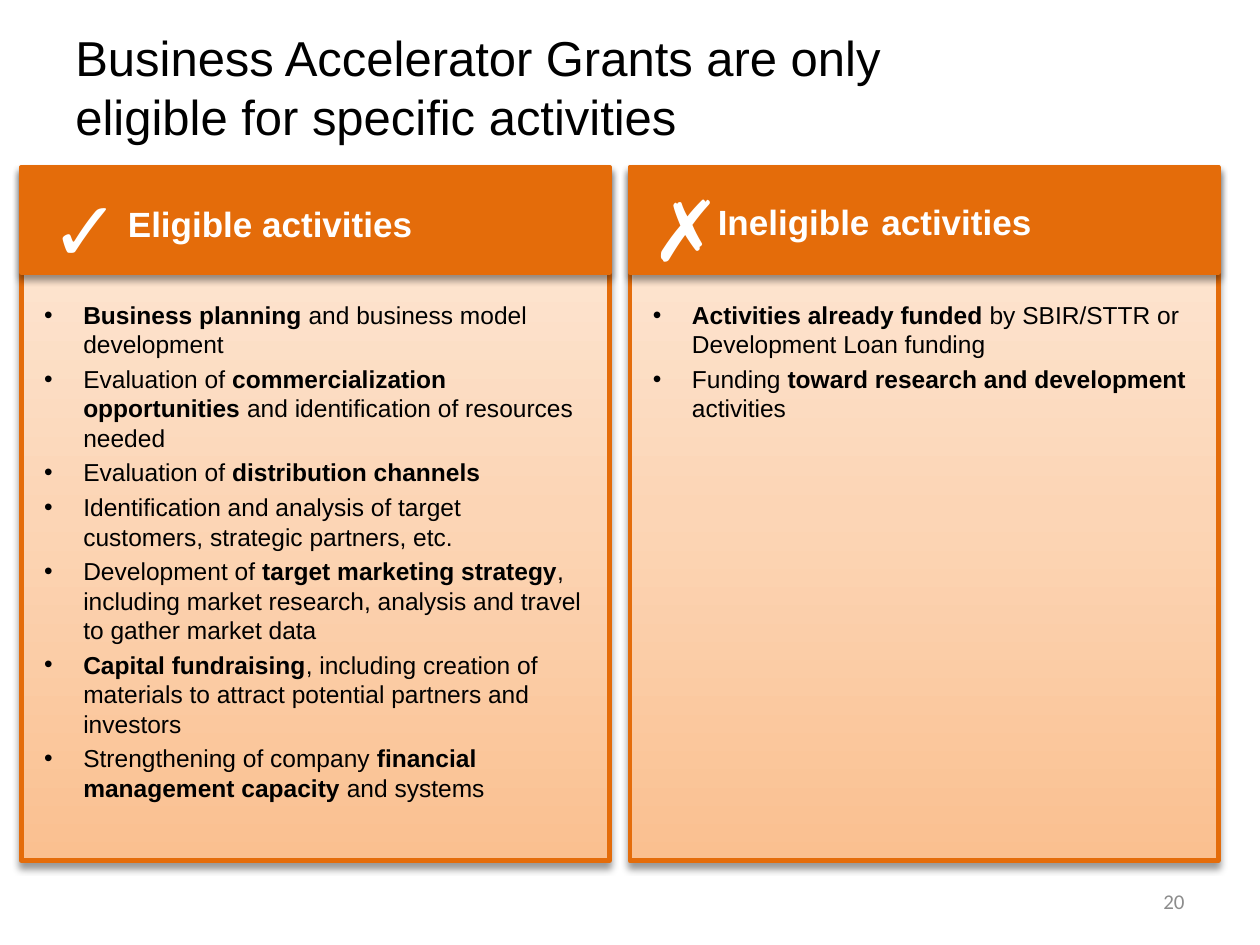
import lxml.etree
import pptx
import pptx.dml.color
import pptx.enum.shapes
import pptx.enum.text
import pptx.oxml.ns
import pptx.util

Cm = pptx.util.Cm
Pt = pptx.util.Pt
qn = pptx.oxml.ns.qn

ORANGE = "E46C0A"
WHITE = "FFFFFF"
BLACK = "000000"
PEACH_STOPS = ((0, "FAC090"), (50, "FCD5B5"), (100, "FDEADA"))

ELIGIBLE = (
    "**Business planning **and business model development",
    "Evaluation of **commercialization opportunities** and identification of resources needed",
    "Evaluation of **distribution channels**",
    "Identification and analysis of target customers, strategic partners, etc.",
    "Development of **target marketing strategy**, including market research, analysis and travel to gather market data",
    "**Capital fundraising**, including creation of materials to attract potential partners and investors",
    "Strengthening of company** financial management capacity** and systems",
)
INELIGIBLE = (
    "**Activities already funded **by SBIR/STTR or Development Loan funding",
    "Funding **toward research and development **activities",
)


def color(hex_code):
    """Turn a hex string into a colour."""
    return pptx.dml.color.RGBColor.from_string(hex_code)


def add_element(parent, tag, **attributes):
    """Append a DrawingML element with the given attributes."""
    element = lxml.etree.SubElement(parent, qn(tag))
    for key, value in attributes.items():
        element.set(key, str(value))
    return element


def set_font(paragraph, size, hex_code, name="Arial", bold=None):
    """Set the font shared by all runs of a paragraph."""
    font = paragraph.font
    font.name, font.size, font.bold = name, Pt(size), bold
    font.color.rgb = color(hex_code)


def add_text_frame(slide, left, top, width, height, margins=True):
    """Add a wrapping text box and return its text frame."""
    frame = slide.shapes.add_textbox(Cm(left), Cm(top), Cm(width), Cm(height)).text_frame
    frame.word_wrap = True
    if not margins:
        frame.margin_left = frame.margin_top = frame.margin_right = frame.margin_bottom = 0
    return frame


def add_line(slide, box, text, size, hex_code, margins=True, name="Arial"):
    """Add a text box that holds one paragraph and return its frame."""
    frame = add_text_frame(slide, *box, margins=margins)
    frame.text = text
    set_font(frame.paragraphs[0], size, hex_code, name)
    return frame


def fill_gradient(shape, stops):
    """Fill a shape with a gradient that rises from its bottom edge."""
    shape.fill.gradient()
    gradient = shape.element.spPr.find(qn("a:gradFill"))
    for child in list(gradient):
        gradient.remove(child)
    stop_list = add_element(gradient, "a:gsLst")
    for position, hex_code in stops:
        stop = add_element(stop_list, "a:gs", pos=position * 1000)
        add_element(stop, "a:srgbClr", val=hex_code)
    add_element(gradient, "a:lin", ang=270 * 60000, scaled=0)


def add_block(slide, left, top, width, height):
    """Add an orange rectangle with a soft shadow below it."""
    block = slide.shapes.add_shape(
        pptx.enum.shapes.MSO_SHAPE.RECTANGLE, Cm(left), Cm(top), Cm(width), Cm(height))
    block.fill.solid()
    block.fill.fore_color.rgb = color(ORANGE)
    block.line.color.rgb = color(ORANGE)
    block.line.width = Pt(2.75)
    block.shadow.inherit = False
    effects = block.element.spPr.find(qn("a:effectLst"))
    shadow = add_element(effects, "a:outerShdw", blurRad=Pt(4), dist=Pt(3),
                         dir=90 * 60000, rotWithShape=0)
    shade = add_element(shadow, "a:srgbClr", val=BLACK)
    add_element(shade, "a:alpha", val=40000)
    return block


def add_activities(slide, left, top, width, height, activities):
    """Add a bulleted list in which ** marks the bold words."""
    frame = add_text_frame(slide, left, top, width, height)
    for index, activity in enumerate(activities):
        paragraph = frame.paragraphs[0] if index == 0 else frame.add_paragraph()
        properties = paragraph._p.get_or_add_pPr()
        properties.set("marL", str(Cm(0.79)))
        properties.set("indent", str(-Cm(0.79)))
        add_element(properties, "a:buFont", typeface="Arial")
        add_element(properties, "a:buChar", char="•")
        set_font(paragraph, 14, BLACK)
        paragraph.space_before = Pt(3 if index else 0)
        for part, words in enumerate(activity.split("**")):
            if words:
                run = paragraph.add_run()
                run.text = words
                run.font.bold = part % 2 == 1


def add_heading(slide, left, top, words, gap_size):
    """Add a bold white heading whose word gap has its own size."""
    frame = add_text_frame(slide, left, top, 9.32, 0.89)
    paragraph = frame.paragraphs[0]
    set_font(paragraph, 20, WHITE, bold=True)
    first, last = words
    for text, size in ((first, 20), (" ", gap_size), (last, 20)):
        run = paragraph.add_run()
        run.text = text
        run.font.size = Pt(size)


def add_panel(slide, left, top, width, height, mark, mark_inset, words,
              heading_inset, heading_drop, gap_size, activities):
    """Build one column: gradient body, header band, mark, heading and list."""
    fill_gradient(add_block(slide, left, top, width, height), PEACH_STOPS)
    add_block(slide, left, top, width, 2.11)
    add_heading(slide, left + heading_inset, top + heading_drop, words, gap_size)
    mark_box = (left + mark_inset, top + 0.2, 1.09, 1.8)
    add_line(slide, mark_box, mark, 48, WHITE, margins=False)
    add_activities(slide, left + 0.21, top + 2.54, width - 0.43, height - 3.5, activities)


def add_title(slide, left, top, width, height):
    """Add the slide title."""
    add_line(slide, (left, top, width, height),
             "Business Accelerator Grants are only eligible for specific activities", 28, BLACK)


def add_page_number(slide, left, top, width, height):
    """Add the grey page number at the right."""
    frame = add_line(slide, (left, top, width, height), "20", 12, "8C8C8C", name="Calibri")
    frame.vertical_anchor = pptx.enum.text.MSO_ANCHOR.MIDDLE
    frame.paragraphs[0].alignment = pptx.enum.text.PP_ALIGN.RIGHT


def main():
    """Build and save the slide."""
    presentation = pptx.Presentation()
    presentation.slide_width, presentation.slide_height = Cm(25.4), Cm(19.05)
    slide = presentation.slides.add_slide(presentation.slide_layouts[6])
    add_title(slide, 1.27, 0.43, 18.85, 3.18)
    panel_top, panel_width, panel_height = 3.38, 11.86, 13.97
    add_panel(slide, 0.43, panel_top, panel_width, panel_height, "✓", 0.58,
              ("Eligible", "activities"), 1.9, 0.58, 20, ELIGIBLE)
    add_panel(slide, 12.7, panel_top, panel_width, panel_height, "✗", 0.43,
              ("Ineligible", "activities"), 1.52, 0.4, 24, INELIGIBLE)
    add_page_number(slide, 18.21, 17.65, 5.92, 1.02)
    presentation.save("out.pptx")


if __name__ == "__main__":
    main()
